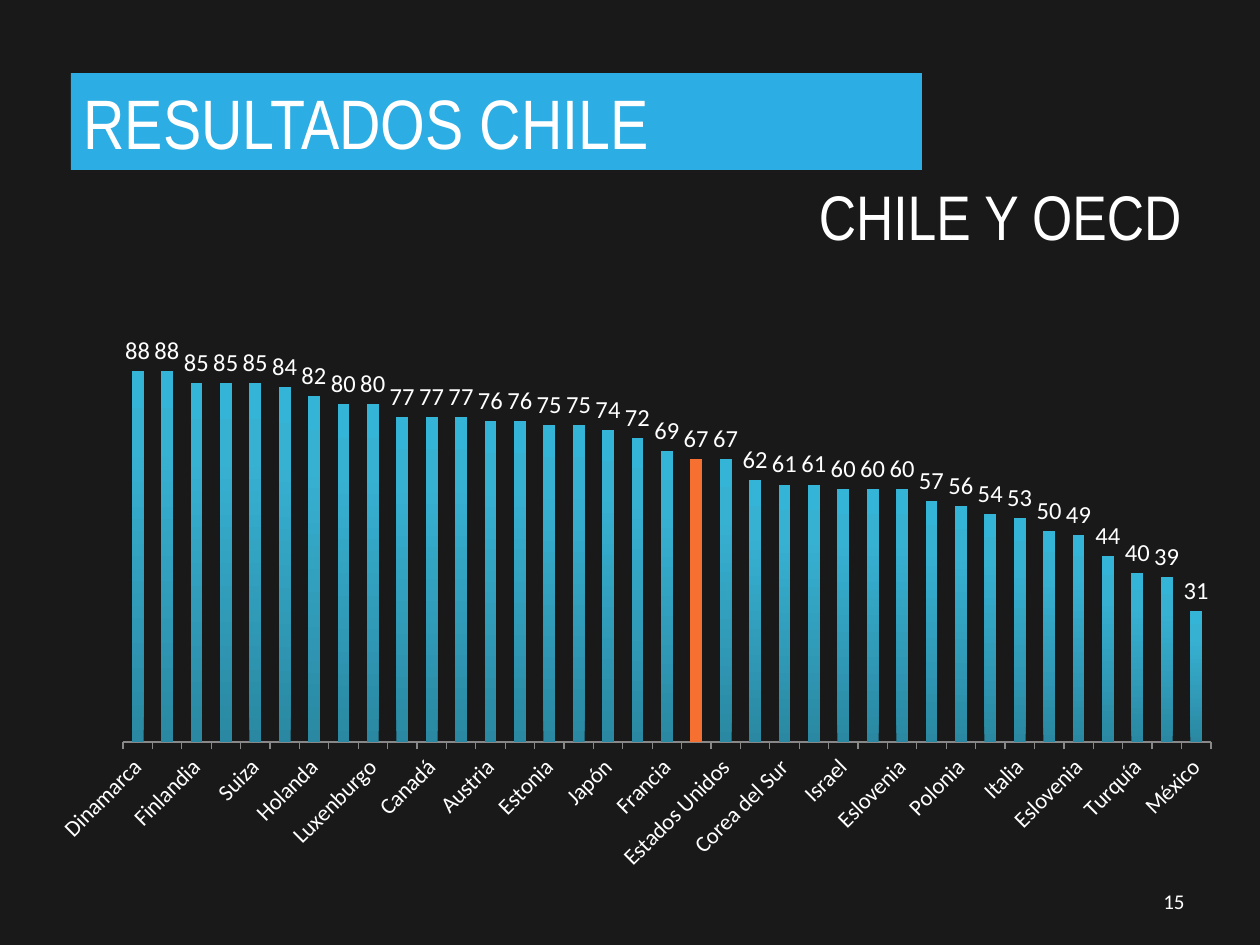
from copy import deepcopy

from lxml import etree
from pptx import Presentation
from pptx import util as u
from pptx.chart.data import CategoryChartData
from pptx.dml.color import RGBColor
from pptx.enum import chart as ch, text
from pptx.oxml import ns

WHITE = "FFFFFF"
BAR_STOPS = [(0, "2A88A2"), (0.8, "37B1D2"), (1, "34B4D6")]
HIGHLIGHT = "Chile"
COUNTRIES = [
    "Dinamarca", "Nueva Zelanda", "Finlandia", "Suecia", "Suiza", "Noruega",
    "Holanda", "Alemania", "Luxenburgo", "Australia", "Canadá", "Reino Unido",
    "Austria", "Belgica", "Estonia", "Islandia", "Japón", "Irlanda", "Francia",
    "Chile", "Estados Unidos", "España", "Corea del Sur", "Portugal", "Israel",
    "Lituania", "Eslovenia", "Latvia", "Polonia", "República Checa", "Italia",
    "Grecia", "Eslovenia", "Hungría", "Turquía", "Colombia", "México",
]
SCORES = [
    88, 88, 85, 85, 85, 84, 82, 80, 80, 77, 77, 77, 76, 76, 75, 75, 74, 72, 69,
    67, 67, 62, 61, 61, 60, 60, 60, 57, 56, 54, 53, 50, 49, 44, 40, 39, 31,
]


def px(n):
    return u.Emu(round(n * 914400 / 126))


def rgb(value):
    return RGBColor.from_string(value)


def style_font(font, name, size, color=WHITE):
    font.name = name
    font.size = u.Pt(size)
    font.color.rgb = rgb(color)


def write(sp, words, name, size, align, anchor=text.MSO_ANCHOR.TOP):
    tf = sp.text_frame
    tf.text = words
    tf.word_wrap = True
    tf.auto_size = text.MSO_AUTO_SIZE.NONE
    tf.vertical_anchor = anchor
    p = tf.paragraphs[0]
    p.alignment = align
    style_font(p.runs[0].font, name, size)


def add_title(s, words, box, fill):
    sp = s.shapes.title
    sp.left, sp.top, sp.width, sp.height = map(px, box)
    sp.fill.solid()
    sp.fill.fore_color.rgb = rgb(fill)
    write(sp, words, "Arial Narrow", 40, text.PP_ALIGN.LEFT)


def add_text(s, words, box, name, size, anchor=text.MSO_ANCHOR.TOP):
    sp = s.shapes.add_textbox(*map(px, box))
    write(sp, words, name, size, text.PP_ALIGN.RIGHT, anchor)


def fill_gradient(series, stops):
    fill = series.format.fill
    fill.gradient()
    fill.gradient_angle = 90
    last = series._element.findall(".//" + ns.qn("a:gs"))[-1]
    last.addnext(deepcopy(last))
    for stop, (position, color) in zip(fill.gradient_stops, stops):
        stop.position = position
        stop.color.rgb = rgb(color)


def set_plot_area(chart, box, plot_box):
    left, top, width, height = box
    x, y, w, h = plot_box
    area = chart._chartSpace.chart.plotArea
    for old in area.findall(ns.qn("c:layout")):
        area.remove(old)
    layout = etree.Element(ns.qn("c:layout"))
    manual = etree.SubElement(layout, ns.qn("c:manualLayout"))
    values = [("layoutTarget", "inner"), ("xMode", "edge"), ("yMode", "edge"),
              ("x", (x - left) / width), ("y", (y - top) / height),
              ("w", w / width), ("h", h / height)]
    for tag, value in values:
        etree.SubElement(manual, ns.qn("c:" + tag)).set("val", str(value))
    area.insert(0, layout)


def style_axes(chart):
    axis = chart.category_axis
    axis.major_tick_mark = ch.XL_TICK_MARK.OUTSIDE
    axis.format.line.color.rgb = rgb("888888")
    axis.format.line.width = u.Pt(0.75)
    style_font(axis.tick_labels.font, "Calibri", 13)
    body = axis._element.find(ns.qn("c:txPr")).find(ns.qn("a:bodyPr"))
    body.set("rot", str(-45 * 60000))
    skip = etree.Element(ns.qn("c:tickLblSkip"))
    skip.set("val", "2")
    axis._element.find(ns.qn("c:noMultiLvlLbl")).addprevious(skip)
    values = chart.value_axis
    values.visible = False
    values.has_major_gridlines = False
    values.minimum_scale, values.maximum_scale = 0, 100


def add_score_chart(s, box, plot_box):
    data = CategoryChartData()
    data.categories = COUNTRIES
    data.add_series("Series 1", SCORES)
    kind = ch.XL_CHART_TYPE.COLUMN_CLUSTERED
    chart = s.shapes.add_chart(kind, *map(px, box), data).chart
    style_font(chart.font, "Calibri", 14, "404040")
    chart.has_legend = False
    chart.has_title = False
    plot = chart.plots[0]
    plot.gap_width = 150
    plot.vary_by_categories = False
    series = plot.series[0]
    fill_gradient(series, BAR_STOPS)
    fill = series.points[COUNTRIES.index(HIGHLIGHT)].format.fill
    fill.solid()
    fill.fore_color.rgb = rgb("F67031")
    labels = series.data_labels
    labels.show_value = True
    labels.position = ch.XL_LABEL_POSITION.OUTSIDE_END
    style_font(labels.font, "Calibri", 14)
    style_axes(chart)
    set_plot_area(chart, box, plot_box)


def main():
    prs = Presentation()
    prs.slide_width, prs.slide_height = px(1260), px(945)
    s = prs.slides.add_slide(prs.slide_layouts[5])
    s.background.fill.solid()
    s.background.fill.fore_color.rgb = rgb("191919")
    add_text(s, "15", (903, 876, 294, 50), "Calibri", 12, text.MSO_ANCHOR.MIDDLE)
    add_title(s, "RESULTADOS CHILE", (71, 73, 851, 97), "2CADE4")
    add_text(s, "CHILE Y OECD", (107, 171, 1087, 89), "Arial Narrow", 36)
    add_score_chart(s, (35, 309, 1201, 575), (123, 320, 1088, 422))
    prs.save("out.pptx")


if __name__ == "__main__":
    main()
